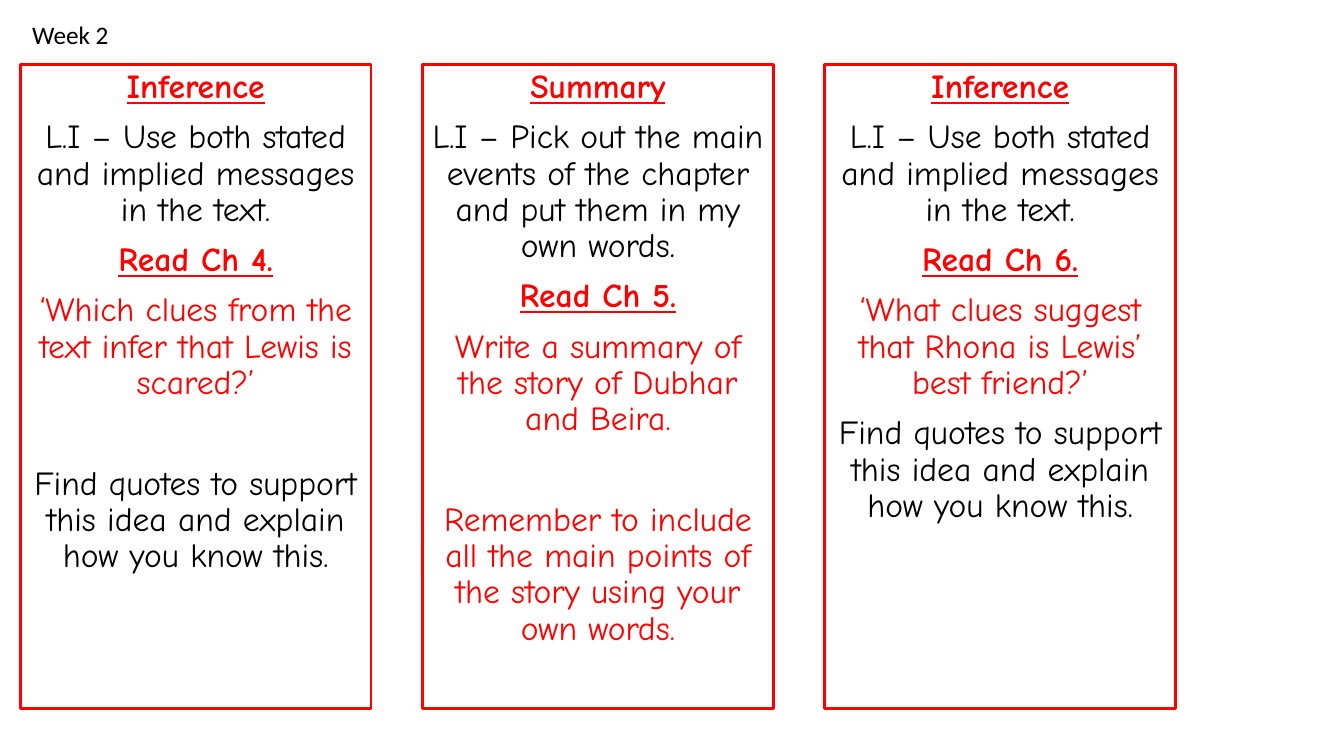
from dataclasses import dataclass

from pptx import Presentation
from pptx.dml.color import RGBColor
from pptx.enum.shapes import MSO_SHAPE
from pptx.enum.text import MSO_ANCHOR, MSO_AUTO_SIZE, PP_ALIGN
from pptx.util import Inches, Pt

RECTANGLE = MSO_SHAPE.RECTANGLE
TOP = MSO_ANCHOR.TOP
GROW = MSO_AUTO_SIZE.SHAPE_TO_FIT_TEXT
CENTER = PP_ALIGN.CENTER
LEFT = PP_ALIGN.LEFT
BLANK_LAYOUT = 6


@dataclass(frozen=True)
class Theme:
    red: RGBColor = RGBColor(255, 0, 0)
    black: RGBColor = RGBColor(0, 0, 0)
    label_font: str = "Calibri"
    lesson_font: str = "Comic Neue"
    label_size: int = 18
    lesson_size: int = 24
    border: int = 2
    line_spacing: float = 0.9
    space_before: int = 10
    wide_space_before: int = 46


THEME = Theme()

INFERENCE_AIM = "L.I – Use both stated and implied messages in the text."
FIND_QUOTES = "Find quotes to support this idea and explain how you know this."

LESSONS = [
    {
        "skill": "Inference",
        "aim": INFERENCE_AIM,
        "reading": "Read Ch 4.",
        "task": "‘Which clues from the text infer that Lewis is scared?’",
        "follow_up": FIND_QUOTES,
        "follow_up_color": THEME.black,
        "follow_up_space": THEME.wide_space_before,
    },
    {
        "skill": "Summary",
        "aim": "L.I – Pick out the main events of the chapter and put them in my own words.",
        "reading": "Read Ch 5.",
        "task": "Write a summary of the story of Dubhar and Beira.",
        "follow_up": "Remember to include all the main points of the story using your own words.",
        "follow_up_color": THEME.red,
        "follow_up_space": THEME.wide_space_before,
    },
    {
        "skill": "Inference",
        "aim": INFERENCE_AIM,
        "reading": "Read Ch 6.",
        "task": "‘What clues suggest that Rhona is Lewis’ best friend?’",
        "follow_up": FIND_QUOTES,
        "follow_up_color": THEME.black,
        "follow_up_space": THEME.space_before,
    },
]

COLUMN_LEFT, COLUMN_TOP = 0.2, 0.64
COLUMN_WIDTH, COLUMN_HEIGHT = 3.48, 6.39
COLUMN_STEP = 3.99


class SlideBuilder:
    def __init__(self, slide, theme):
        self.slide = slide
        self.theme = theme

    def add_run(self, paragraph, text, font_name, size, color, heading=False):
        run = paragraph.add_run()
        run.text = text
        font = run.font
        font.name = font_name
        font.size = Pt(size)
        font.color.rgb = color
        font.bold = heading
        font.underline = heading

    def add_label(self, text, left, top, width, height):
        box = self.slide.shapes.add_textbox(
            Inches(left), Inches(top), Inches(width), Inches(height)
        )
        frame = box.text_frame
        frame.word_wrap = True
        frame.auto_size = GROW
        paragraph = frame.paragraphs[0]
        paragraph.alignment = LEFT
        self.add_run(
            paragraph, text, self.theme.label_font, self.theme.label_size, self.theme.black
        )

    def add_column(self, lines, left, top, width, height):
        shape = self.slide.shapes.add_shape(
            RECTANGLE, Inches(left), Inches(top), Inches(width), Inches(height)
        )
        shape.shadow.inherit = False
        shape.fill.background()
        shape.line.color.rgb = self.theme.red
        shape.line.width = Pt(self.theme.border)
        frame = shape.text_frame
        frame.word_wrap = True
        frame.vertical_anchor = TOP
        for index, (text, color, heading, space) in enumerate(lines):
            paragraph = frame.add_paragraph() if index else frame.paragraphs[0]
            paragraph.alignment = CENTER
            paragraph.line_spacing = self.theme.line_spacing
            paragraph.space_before = Pt(space)
            self.add_run(
                paragraph, text, self.theme.lesson_font, self.theme.lesson_size, color, heading
            )

    def add_lesson(self, lesson, left):
        red, black, space = self.theme.red, self.theme.black, self.theme.space_before
        lines = [
            (lesson["skill"], red, True, space),
            (lesson["aim"], black, False, space),
            (lesson["reading"], red, True, space),
            (lesson["task"], red, False, space),
            (lesson["follow_up"], lesson["follow_up_color"], False, lesson["follow_up_space"]),
        ]
        self.add_column(lines, left, COLUMN_TOP, COLUMN_WIDTH, COLUMN_HEIGHT)


def main():
    presentation = Presentation()
    presentation.slide_width = Inches(13.33)
    presentation.slide_height = Inches(7.5)
    slide = presentation.slides.add_slide(presentation.slide_layouts[BLANK_LAYOUT])
    builder = SlideBuilder(slide, THEME)
    for index, lesson in enumerate(LESSONS):
        builder.add_lesson(lesson, COLUMN_LEFT + index * COLUMN_STEP)
    builder.add_label("Week 2", 0.22, 0.14, 1.94, 0.4)
    presentation.save("out.pptx")


if __name__ == "__main__":
    main()
